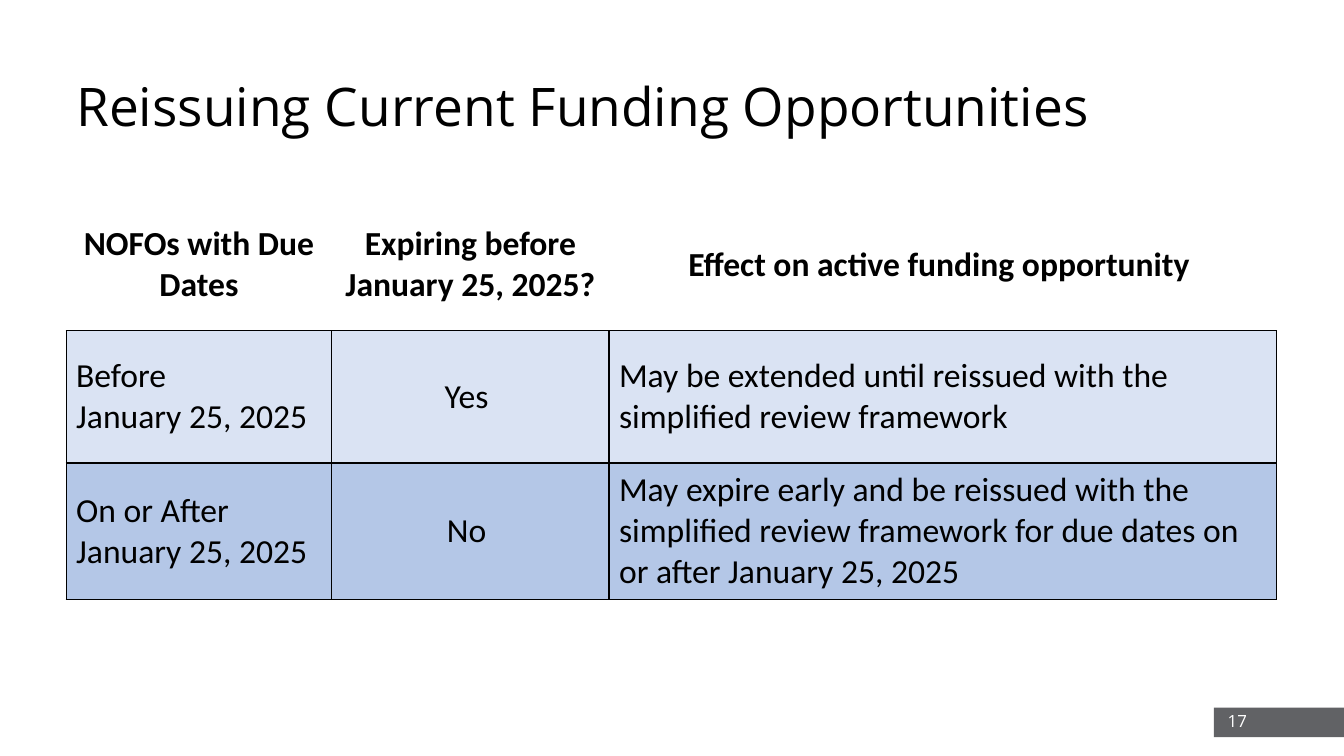
from lxml import etree
from pptx import Presentation
from pptx import util as u
from pptx.dml.color import RGBColor
from pptx.enum import shapes, text
from pptx.oxml import ns

PX = 9525  # EMU per px, 96 px to the inch
BLACK = RGBColor(0x00, 0x00, 0x00)
WHITE = RGBColor(0xFF, 0xFF, 0xFF)
GRAY = RGBColor(0x61, 0x62, 0x65)
ROW_FILLS = [None, RGBColor(0xDA, 0xE3, 0xF3), RGBColor(0xB4, 0xC7, 0xE7)]
COLUMNS = [253, 264, 636]
ROWS = [126, 126, 130]
CONTENT = [
    ["NOFOs with Due Dates", "Expiring before January 25, 2025? ",
     "Effect on active funding opportunity "],
    ["Before\nJanuary 25, 2025 ", "Yes ",
     "May be extended until reissued with the simplified review framework "],
    ["On or After January 25, 2025 ", "No ",
     "May expire early and be reissued with the simplified review framework "
     "for due dates on or after January 25, 2025 "],
]


def px(*lengths):
    return [u.Emu(length * PX) for length in lengths]


def style(paragraph, font, size, color, align, bold=False):
    paragraph.alignment = align
    for run in paragraph.runs:
        run.font.name = font
        run.font.size = u.Pt(size)
        run.font.bold = bold
        run.font.color.rgb = color


deck = Presentation()
deck.slide_width, deck.slide_height = px(1280, 720)
slide = deck.slides.add_slide(deck.slide_layouts[5])

# Title
title = slide.shapes.title
title.left, title.top, title.width, title.height = px(63, 35, 1235, 139)
title.text_frame.text = "Reissuing Current Funding Opportunities"
title.text_frame.vertical_anchor = text.MSO_ANCHOR.MIDDLE
heading = title.text_frame.paragraphs[0]
heading.line_spacing = 0.9
style(heading, "Open Sans", 38, BLACK, text.PP_ALIGN.LEFT)

# Page number on its gray bar
bar = slide.shapes.add_shape(shapes.MSO_SHAPE.RECTANGLE, *px(1156, 674, 124, 28))
bar.shadow.inherit = False
bar.fill.solid()
bar.fill.fore_color.rgb = GRAY
bar.line.fill.background()

page = slide.shapes.add_textbox(*px(909, 667, 288, 38)).text_frame
page.word_wrap = True
page.vertical_anchor = text.MSO_ANCHOR.MIDDLE
page.text = "17"
style(page.paragraphs[0], "Open Sans", 12, WHITE, text.PP_ALIGN.RIGHT)

# Table of effects by due date
effects = slide.shapes.add_table(
    len(ROWS), len(COLUMNS), *px(63, 189, sum(COLUMNS), sum(ROWS))).table
effects.first_row = effects.horz_banding = False
for column, width in zip(effects.columns, px(*COLUMNS)):
    column.width = width
for row, height in zip(effects.rows, px(*ROWS)):
    row.height = height

for r, wordings in enumerate(CONTENT):
    is_header = r == 0
    for c, wording in enumerate(wordings):
        cell = effects.cell(r, c)
        cell.text = wording
        cell.vertical_anchor = text.MSO_ANCHOR.MIDDLE
        centered = is_header or c == 1
        align = text.PP_ALIGN.CENTER if centered else text.PP_ALIGN.LEFT
        for paragraph in cell.text_frame.paragraphs:
            style(paragraph, "Calibri", 24, BLACK, align, is_header)

        # Borders come before the fill; the header has only its bottom edge
        properties = cell._tc.get_or_add_tcPr()
        for side in "B" if is_header else "LRTB":
            edge = etree.SubElement(properties, ns.qn("a:ln" + side), w=str(u.Pt(1)))
            ink = etree.SubElement(edge, ns.qn("a:solidFill"))
            etree.SubElement(ink, ns.qn("a:srgbClr"), val=str(BLACK))
        if is_header:
            cell.fill.background()
        else:
            cell.fill.solid()
            cell.fill.fore_color.rgb = ROW_FILLS[r]

deck.save("out.pptx")
